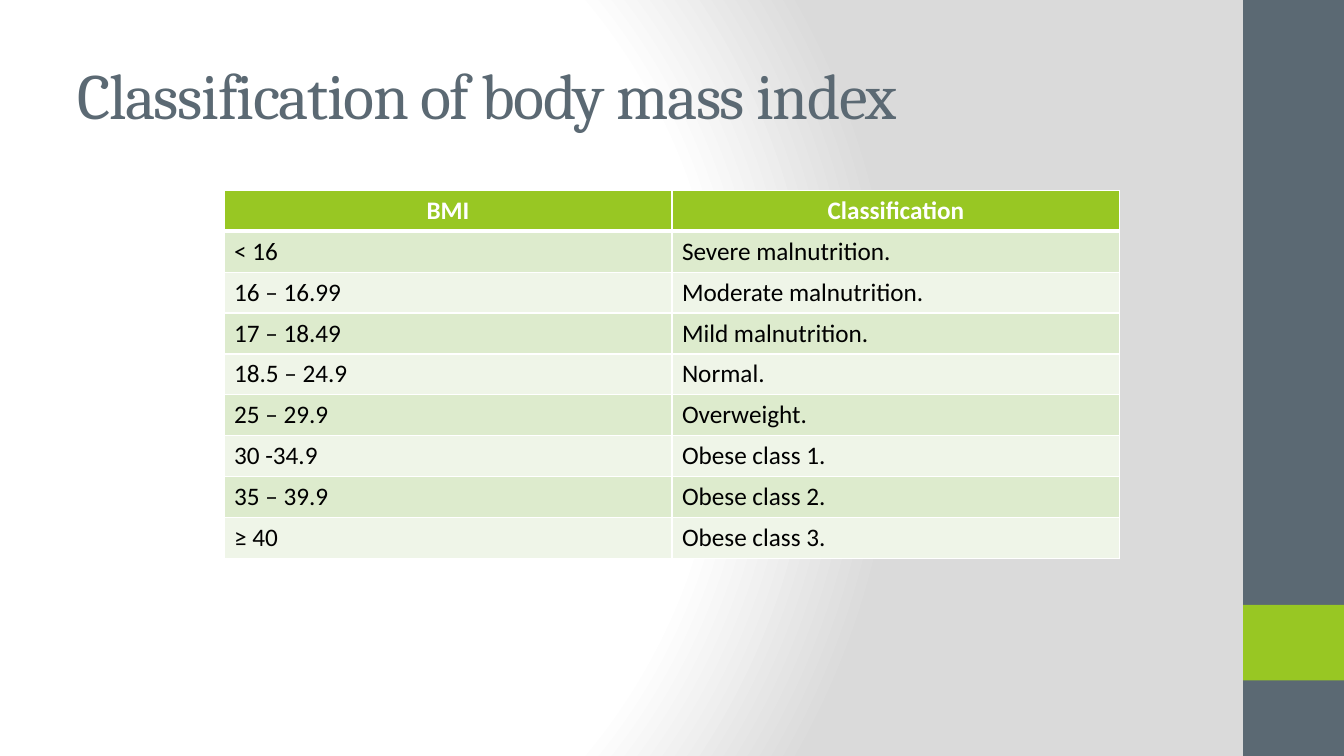
from pptx import Presentation
from pptx.dml.color import RGBColor
from pptx.enum.shapes import MSO_SHAPE
from pptx.enum.text import MSO_ANCHOR, PP_ALIGN
from pptx.oxml import parse_xml
from pptx.oxml.ns import nsdecls
from pptx.util import Pt

SLATE, LIME, WHITE, BLACK = "5B6973", "98C723", "FFFFFF", "000000"
BANDS = ("DDEBCD", "EFF5E8")
ROWS = [
    ("BMI", "Classification"),
    ("< 16", "Severe malnutrition."),
    ("16 – 16.99", "Moderate malnutrition."),
    ("17 – 18.49", "Mild malnutrition."),
    ("18.5 – 24.9", "Normal."),
    ("25 – 29.9", "Overweight."),
    ("30 -34.9", "Obese class 1."),
    ("35 – 39.9", "Obese class 2."),
    ("≥ 40", "Obese class 3."),
]


def paint(fill, color):
    fill.solid()
    fill.fore_color.rgb = RGBColor.from_string(color)


def style(para, name, size, color, bold=False):
    font = para.font
    font.name, font.size, font.bold = name, Pt(size), bold
    font.color.rgb = RGBColor.from_string(color)


def add_glow(slide):
    """Fill the background with a radial gradient, white to grey."""
    slide.background.fill.gradient()
    old = slide.element.xpath(".//p:bgPr/a:gradFill")[0]
    stops = "".join(
        f'<a:gs pos="{pos * 1000}"><a:srgbClr val="{color}"/></a:gs>'
        for pos, color in ((0, WHITE), (75, WHITE), (100, "DADADA")))
    new = parse_xml(
        f'<a:gradFill {nsdecls("a")} rotWithShape="1"><a:gsLst>{stops}</a:gsLst>'
        '<a:path path="circle"><a:fillToRect l="20000" t="50000" '
        'r="100000" b="50000"/></a:path></a:gradFill>')
    old.getparent().replace(old, new)


def add_bar(slide, top, height, color):
    bar = slide.shapes.add_shape(
        MSO_SHAPE.RECTANGLE, Pt(888), Pt(top), Pt(72), Pt(height))
    bar.shadow.inherit = False
    paint(bar.fill, color)
    bar.line.fill.background()


def add_title(slide, text):
    box = slide.shapes.add_textbox(Pt(48), Pt(21.6), Pt(800), Pt(90))
    frame = box.text_frame
    frame.word_wrap = True
    frame.vertical_anchor = MSO_ANCHOR.MIDDLE
    para = frame.paragraphs[0]
    run = para.add_run()
    run.text = text
    style(para, "Cambria", 46, SLATE)
    run.font._element.set("spc", "-100")


def add_edges(cell, base):
    """Draw white cell borders, the bottom one with width base."""
    props = cell._tc.get_or_add_tcPr()
    for spot, (side, width) in enumerate(
            (("L", 1), ("R", 1), ("T", 1), ("B", base))):
        props.insert(spot, parse_xml(
            f'<a:ln{side} {nsdecls("a")} w="{Pt(width)}"><a:solidFill>'
            f'<a:srgbClr val="{WHITE}"/></a:solidFill></a:ln{side}>'))


def add_grid(slide, rows):
    high = 29.2
    table = slide.shapes.add_table(
        len(rows), 2, Pt(160), Pt(136), Pt(640), Pt(high * len(rows))).table
    for r, row in enumerate(rows):
        head = r == 0
        table.rows[r].height = Pt(high)
        for c, text in enumerate(row):
            cell = table.cell(r, c)
            cell.text = text
            para = cell.text_frame.paragraphs[0]
            para.alignment = PP_ALIGN.CENTER if head else PP_ALIGN.LEFT
            style(para, "Calibri", 18, WHITE if head else BLACK, head)
            paint(cell.fill, LIME if head else BANDS[(r - 1) % 2])
            add_edges(cell, 3 if head else 1)


def main():
    deck = Presentation()
    deck.slide_width, deck.slide_height = Pt(960), Pt(540)
    slide = deck.slides.add_slide(deck.slide_layouts[6])
    add_glow(slide)
    add_bar(slide, 0, 540, SLATE)
    add_bar(slide, 432, 54, LIME)
    add_title(slide, "Classification of body mass index")
    add_grid(slide, ROWS)
    deck.save("out.pptx")


if __name__ == "__main__":
    main()
